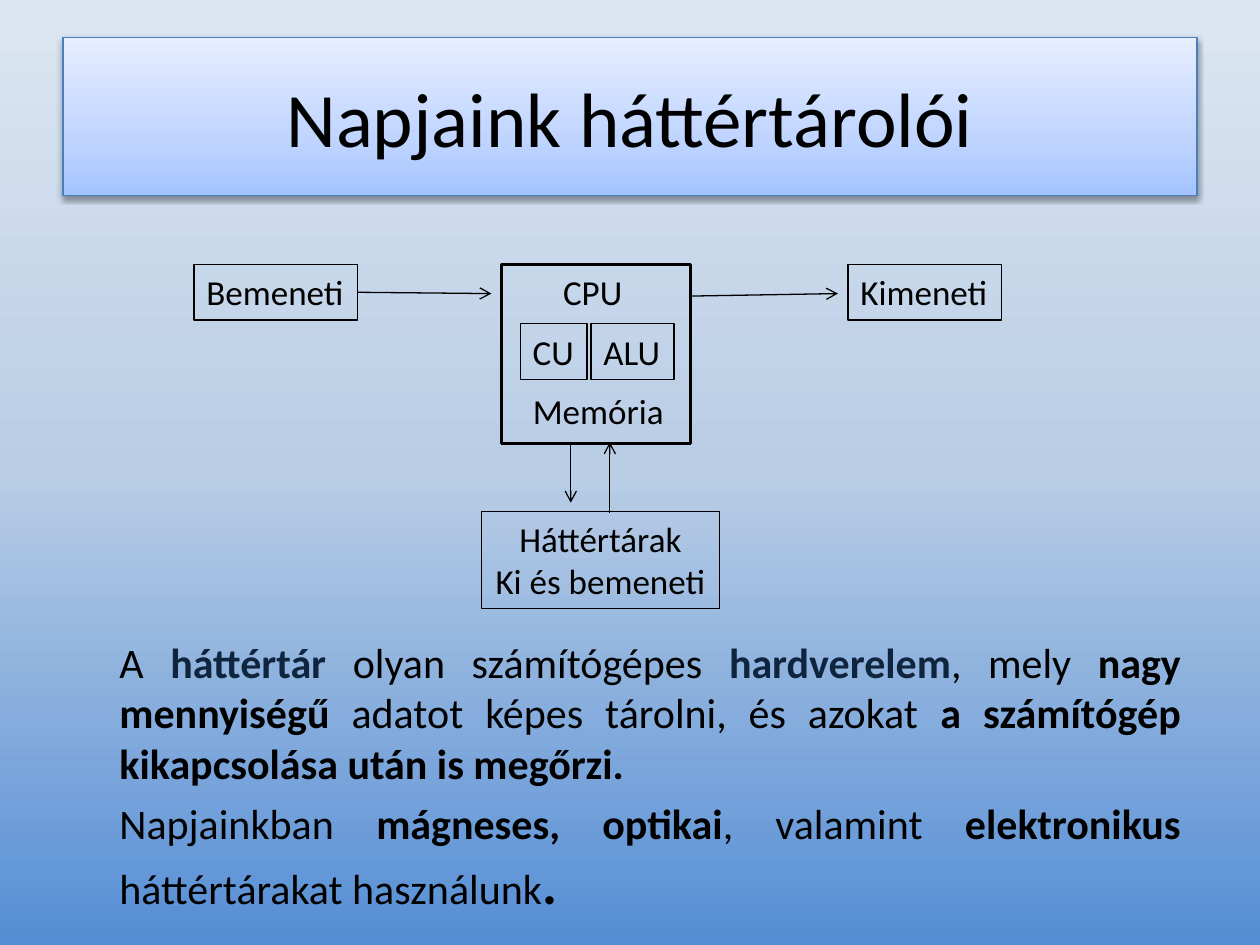
from dataclasses import dataclass

from lxml.etree import SubElement
from pptx import Presentation
from pptx.dml.color import RGBColor
from pptx.enum.shapes import MSO_CONNECTOR, MSO_SHAPE
from pptx.enum.text import MSO_ANCHOR, PP_ALIGN
from pptx.oxml.ns import qn
from pptx.util import Inches, Pt


@dataclass(frozen=True)
class Theme:
    font: str = "Calibri"
    ink: str = "000000"
    accent: str = "0F243E"
    title_line: str = "4B7EBC"
    background: tuple = ((0, "DCE6F2"), (50, "B9CDE5"), (100, "558ED5"))
    title_fill: tuple = ((0, "E6EEFF"), (65, "BFD4FF"), (100, "A4C4FF"))
    title_size: int = 44
    body_size: int = 24
    label_size: int = 20
    stop_size: int = 32
    thin: float = 0.75
    thick: float = 2


def write(p, text, size, font=Theme.font, color=Theme.ink, bold=False):
    r = p.add_run()
    r.text = text
    r.font.name = font
    r.font.size = Pt(size)
    r.font.bold = bold
    r.font.color.rgb = RGBColor.from_string(color)


def fill_down(fill, element, stops):
    """Give a fill a top-to-bottom gradient; element is what holds the fill."""
    fill.gradient()
    fill.gradient_angle = 270
    stop_list = next(element.iter(qn("a:gsLst")))
    for old in list(stop_list):
        stop_list.remove(old)
    for position, color in stops:
        stop = SubElement(stop_list, qn("a:gs"), pos=str(position * 1000))
        SubElement(stop, qn("a:srgbClr"), val=color)


def set_line(line, color, width):
    line.color.rgb = RGBColor.from_string(color)
    line.width = Pt(width)


class SlideBuilder:
    def __init__(self, prs, theme):
        self.theme = theme
        self.s = prs.slides.add_slide(prs.slide_layouts[5])
        fill_down(self.s.background.fill, self.s.element, theme.background)

    def title(self, text, left, top, width, height):
        sp = self.s.shapes.title
        sp.left, sp.top = Inches(left), Inches(top)
        sp.width, sp.height = Inches(width), Inches(height)
        fill_down(sp.fill, sp.element, self.theme.title_fill)
        set_line(sp.line, self.theme.title_line, self.theme.thin)
        self.title_shadow(sp)
        tf = sp.text_frame
        tf.vertical_anchor = MSO_ANCHOR.MIDDLE
        p = tf.paragraphs[0]
        p.alignment = PP_ALIGN.CENTER
        write(p, text, self.theme.title_size)

    def title_shadow(self, sp):
        sp.shadow.inherit = False
        effects = next(sp.element.iter(qn("a:effectLst")))
        shadow = SubElement(effects, qn("a:outerShdw"), blurRad=str(Pt(3.1)),
                            dist=str(Pt(1.6)), dir="5400000", rotWithShape="0")
        color = SubElement(shadow, qn("a:srgbClr"), val=self.theme.ink)
        SubElement(color, qn("a:alpha"), val="38000")

    def frame(self, left, top, width, height, weight):
        sp = self.s.shapes.add_shape(MSO_SHAPE.RECTANGLE, Inches(left), Inches(top),
                                     Inches(width), Inches(height))
        sp.shadow.inherit = False
        sp.fill.background()
        set_line(sp.line, self.theme.ink, weight)
        return sp

    def label(self, lines, left, top, width, height=0.44, boxed=True,
              align=PP_ALIGN.LEFT):
        if boxed:
            sp = self.frame(left, top, width, height, self.theme.thin)
        else:
            sp = self.s.shapes.add_textbox(Inches(left), Inches(top),
                                           Inches(width), Inches(height))
        tf = sp.text_frame
        tf.word_wrap = False
        tf.vertical_anchor = MSO_ANCHOR.TOP
        for i, text in enumerate(lines):
            p = tf.add_paragraph() if i else tf.paragraphs[0]
            p.alignment = align
            write(p, text, self.theme.label_size)
        return sp

    def arrow(self, x1, y1, x2, y2, source=None, side=3):
        """Draw an arrow, joined at its start to a side of source if given."""
        line = self.s.shapes.add_connector(MSO_CONNECTOR.STRAIGHT, Inches(x1), Inches(y1),
                                           Inches(x2), Inches(y2))
        if source is not None:
            line.begin_connect(source, side)
        set_line(line.line, self.theme.ink, self.theme.thin)
        SubElement(next(line.element.iter(qn("a:ln"))), qn("a:tailEnd"), type="arrow")
        SubElement(line.element.spPr, qn("a:effectLst"))

    def body(self, paragraphs, left, top, width, height):
        """Write justified paragraphs of (text, format) runs."""
        tf = self.s.shapes.add_textbox(Inches(left), Inches(top),
                                       Inches(width), Inches(height)).text_frame
        tf.word_wrap = True
        for i, (space, runs) in enumerate(paragraphs):
            p = tf.add_paragraph() if i else tf.paragraphs[0]
            p.alignment = PP_ALIGN.JUSTIFY
            p.space_before = Pt(space)
            p._p.get_or_add_pPr().set("marL", str(Inches(0.38)))
            for text, style in runs:
                write(p, text, **{"size": self.theme.body_size, **style})


def main():
    prs = Presentation()
    prs.slide_width, prs.slide_height = Inches(10), Inches(7.5)
    theme = Theme()
    slide = SlideBuilder(prs, theme)
    slide.title("Napjaink háttértárolói", 0.5, 0.3, 9, 1.25)

    plain, bold = {}, {"bold": True}
    term = {"bold": True, "color": theme.accent}
    slide.body([
        (5, [("A ", plain), ("háttértár ", term), ("olyan számítógépes ", plain),
             ("hardverelem", term), (", mely ", plain), ("nagy mennyiségű", bold),
             (" adatot képes tárolni, és azokat ", plain),
             ("a számítógép kikapcsolása után is megőrzi.", bold)]),
        (6, [("Napjainkban ", plain), ("mágneses, optikai", bold), (", valamint ", plain),
             ("elektronikus", bold), (" háttértárakat használunk", plain),
             (".", {"bold": True, "size": theme.stop_size})]),
    ], 0.47, 5, 9, 2.32)

    top_row, unit_row, memory_row = 2.1, 2.57, 3.04
    source = slide.label(["Bemeneti"], 1.54, top_row, 1.3)
    slide.label(["Kimeneti"], 6.73, top_row, 1.22)
    slide.label(["CPU"], 4.37, top_row, 0.79, boxed=False)
    slide.label(["CU"], 4.13, unit_row, 0.53)
    slide.label(["ALU"], 4.69, unit_row, 0.66)
    slide.label(["Memória"], 4.13, memory_row, 1.25, boxed=False)
    slide.frame(3.98, top_row, 1.5, 1.42, theme.thick)
    slide.label(["Háttértárak", "Ki és bemeneti"], 3.82, 4.06, 1.89, 0.77,
                align=PP_ALIGN.CENTER)

    slide.arrow(2.84, 2.32, 3.9, 2.33, source)
    slide.arrow(5.47, 2.35, 6.65, 2.33)
    slide.arrow(4.53, 3.51, 4.53, 3.99)
    slide.arrow(4.84, 4.07, 4.84, 3.51)
    prs.save("out.pptx")


if __name__ == "__main__":
    main()
